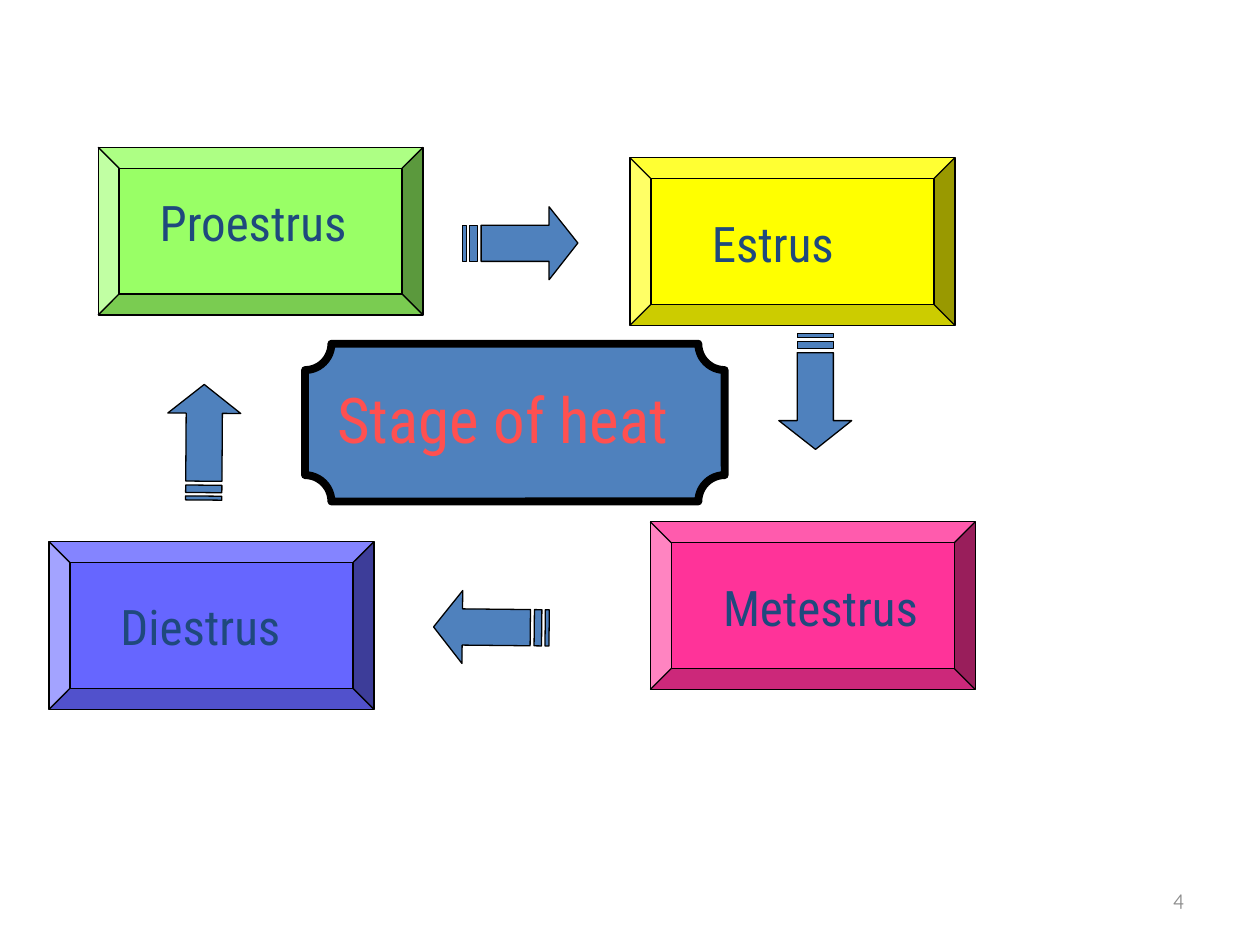
from typing import NamedTuple

import pptx
import pptx.util
from pptx.dml.color import RGBColor
from pptx.enum.shapes import MSO_SHAPE
from pptx.enum.text import MSO_ANCHOR, MSO_AUTO_SIZE, PP_ALIGN
from pptx.util import Cm, Pt

BLACK = RGBColor(0x00, 0x00, 0x00)
BLUE = RGBColor(0x4F, 0x81, 0xBD)
NAVY = RGBColor(0x1F, 0x49, 0x7D)
CORAL = RGBColor(0xFF, 0x50, 0x50)
GREY = RGBColor(0x8C, 0x8C, 0x8C)
PINK = RGBColor(0xFF, 0x33, 0x99)
VIOLET = RGBColor(0x66, 0x66, 0xFF)
YELLOW = RGBColor(0xFF, 0xFF, 0x00)
GREEN = RGBColor(0x99, 0xFF, 0x66)

FONT = "Roboto Condensed"
STAGE_SIZE = (6.55, 3.38)
LABEL_HEIGHT = 1.45


class Box(NamedTuple):
    left: float
    top: float
    width: float
    height: float


class Stage(NamedTuple):
    left: float
    top: float
    color: RGBColor
    text: str
    label: Box


class Arrow(NamedTuple):
    left: float
    top: float
    rotation: float


STAGES = [
    Stage(13.11, 10.52, PINK, " Metestrus", Box(14.1, 11.51, 5.03, LABEL_HEIGHT)),
    Stage(0.99, 10.92, VIOLET, "Diestrus", Box(2.18, 11.91, 3.96, LABEL_HEIGHT)),
    Stage(12.7, 3.18, YELLOW, "Estrus", Box(14.1, 4.17, 3.05, LABEL_HEIGHT)),
    Stage(1.98, 2.97, GREEN, "Proestrus", Box(2.97, 3.76, 4.5, LABEL_HEIGHT)),
]

ARROWS = [
    Arrow(9.32, 4.17, 0),
    Arrow(8.74, 11.91, 180.6),
    Arrow(15.27, 7.16, 90),
    Arrow(2.95, 8.18, 270.4),
]

# Arrow outline in hundredths of a centimetre
ARROW_HEAD = [(175, 0), (175, 37), (38, 37), (38, 110), (175, 110), (175, 147), (233, 73)]
STRIPES = [(15, 30), (0, 8)]


def style(sp, fill: RGBColor, line_width: float) -> None:
    sp.shadow.inherit = False
    sp.fill.solid()
    sp.fill.fore_color.rgb = fill
    sp.line.color.rgb = BLACK
    sp.line.width = Pt(line_width)


def add_panel(s, kind, box: Box, adj: float, fill: RGBColor, line_width: float) -> None:
    sp = s.shapes.add_shape(kind, *map(Cm, box))
    sp.adjustments[0] = adj
    style(sp, fill, line_width)


def add_text(s, box: Box, text: str, color: RGBColor, font: dict, frame: dict,
             align=PP_ALIGN.LEFT) -> None:
    tf = s.shapes.add_textbox(*map(Cm, box)).text_frame
    for name, value in frame.items():
        setattr(tf, name, value)
    p = tf.paragraphs[0]
    p.alignment = align
    r = p.add_run()
    r.text = text
    for name, value in font.items():
        setattr(r.font, name, value)
    r.font.color.rgb = color


def add_arrow(s, arrow: Arrow) -> None:
    fb = s.shapes.build_freeform(*ARROW_HEAD[0], scale=float(Cm(0.01)))
    fb.add_line_segments(ARROW_HEAD[1:], close=True)
    for x1, x2 in STRIPES:
        fb.move_to(x1, 37)
        fb.add_line_segments([(x1, 110), (x2, 110), (x2, 37)], close=True)
    sp = fb.convert_to_shape(Cm(arrow.left), Cm(arrow.top))
    style(sp, BLUE, 0.75)
    sp.rotation = arrow.rotation


def main() -> None:
    prs = pptx.Presentation()
    prs.slide_width, prs.slide_height = Cm(25.4), Cm(19.05)
    s = prs.slides.add_slide(prs.slide_layouts[6])

    # Slide number
    add_text(s, Box(18.21, 17.65, 5.92, 1.02), "4", GREY,
             {"name": "Quicksand", "size": Pt(12)},
             {"word_wrap": True, "vertical_anchor": MSO_ANCHOR.MIDDLE},
             PP_ALIGN.RIGHT)

    # Central plaque and the four stages
    add_panel(s, MSO_SHAPE.PLAQUE, Box(6.15, 6.93, 8.46, 3.18), 0.167, BLUE, 4.5)
    for stage in STAGES:
        add_panel(s, MSO_SHAPE.BEVEL, Box(stage.left, stage.top, *STAGE_SIZE),
                  0.125, stage.color, 0.75)

    # Labels
    frame = {"word_wrap": False, "auto_size": MSO_AUTO_SIZE.SHAPE_TO_FIT_TEXT}
    add_text(s, Box(6.55, 7.54, 7.32, 1.78), "Stage of heat", CORAL,
             {"name": FONT, "size": Pt(36)}, frame)
    for stage in STAGES:
        add_text(s, stage.label, stage.text, NAVY,
                 {"name": FONT, "size": Pt(28)}, frame)

    # Arrows around the cycle
    for arrow in ARROWS:
        add_arrow(s, arrow)

    prs.save("out.pptx")


if __name__ == "__main__":
    main()
